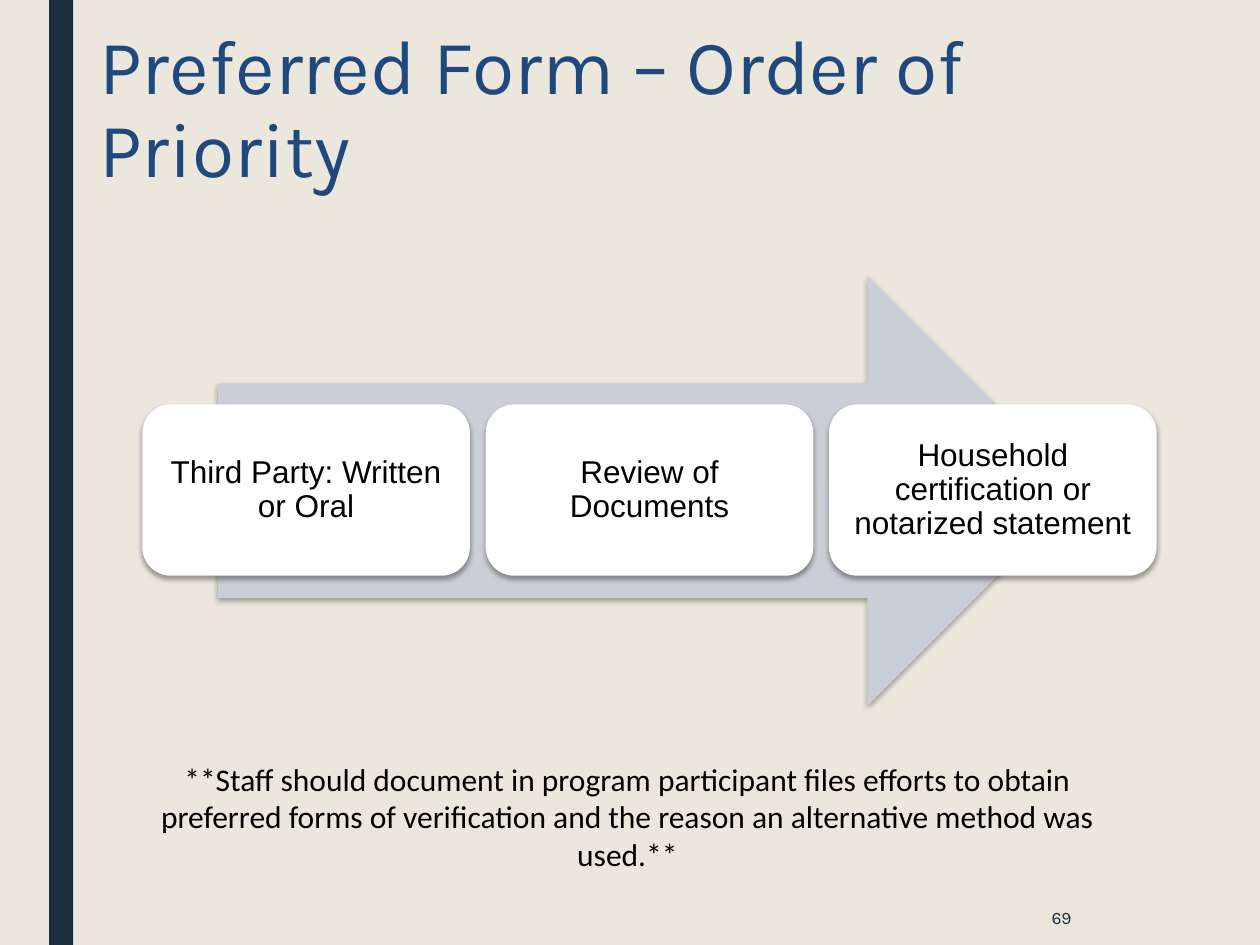
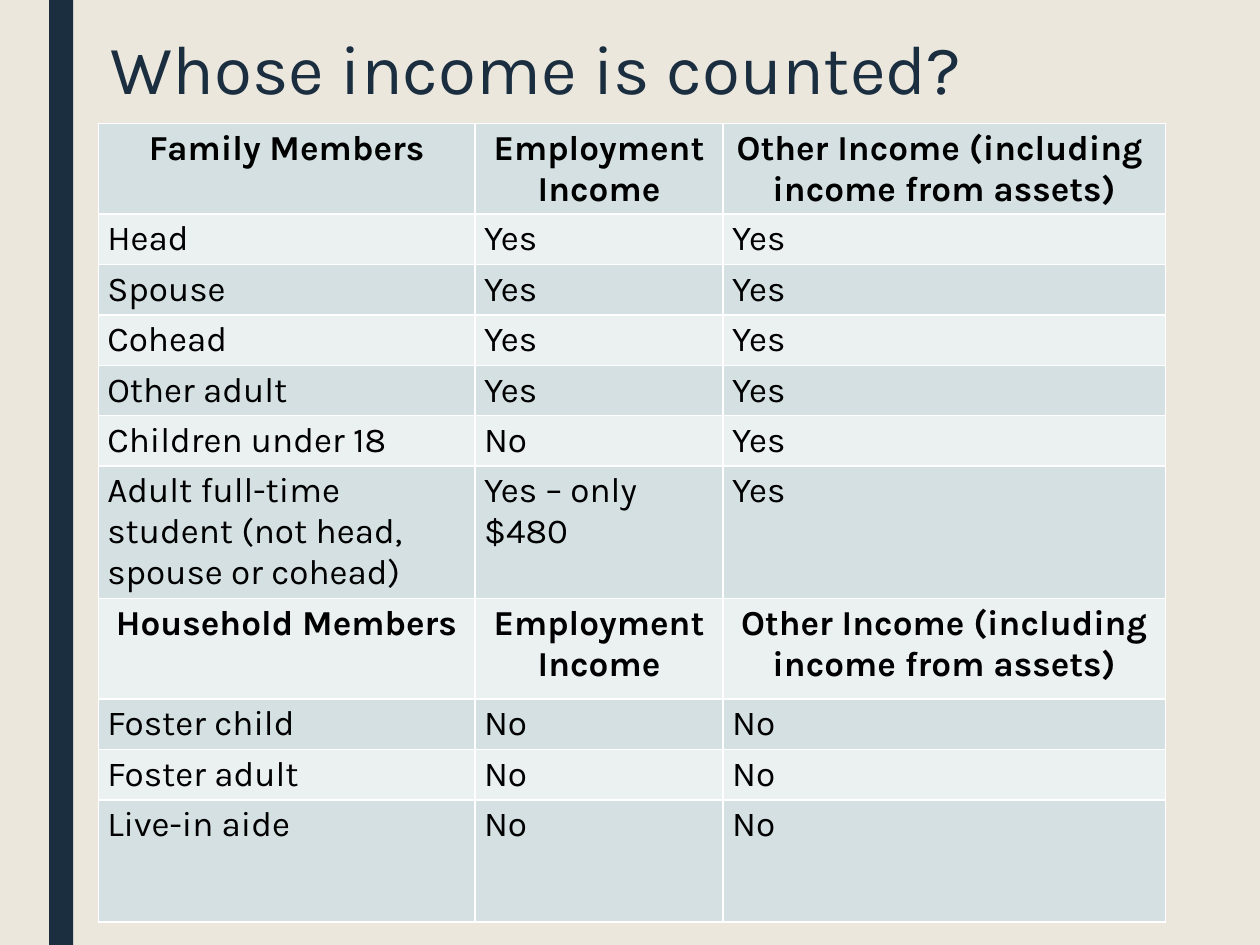
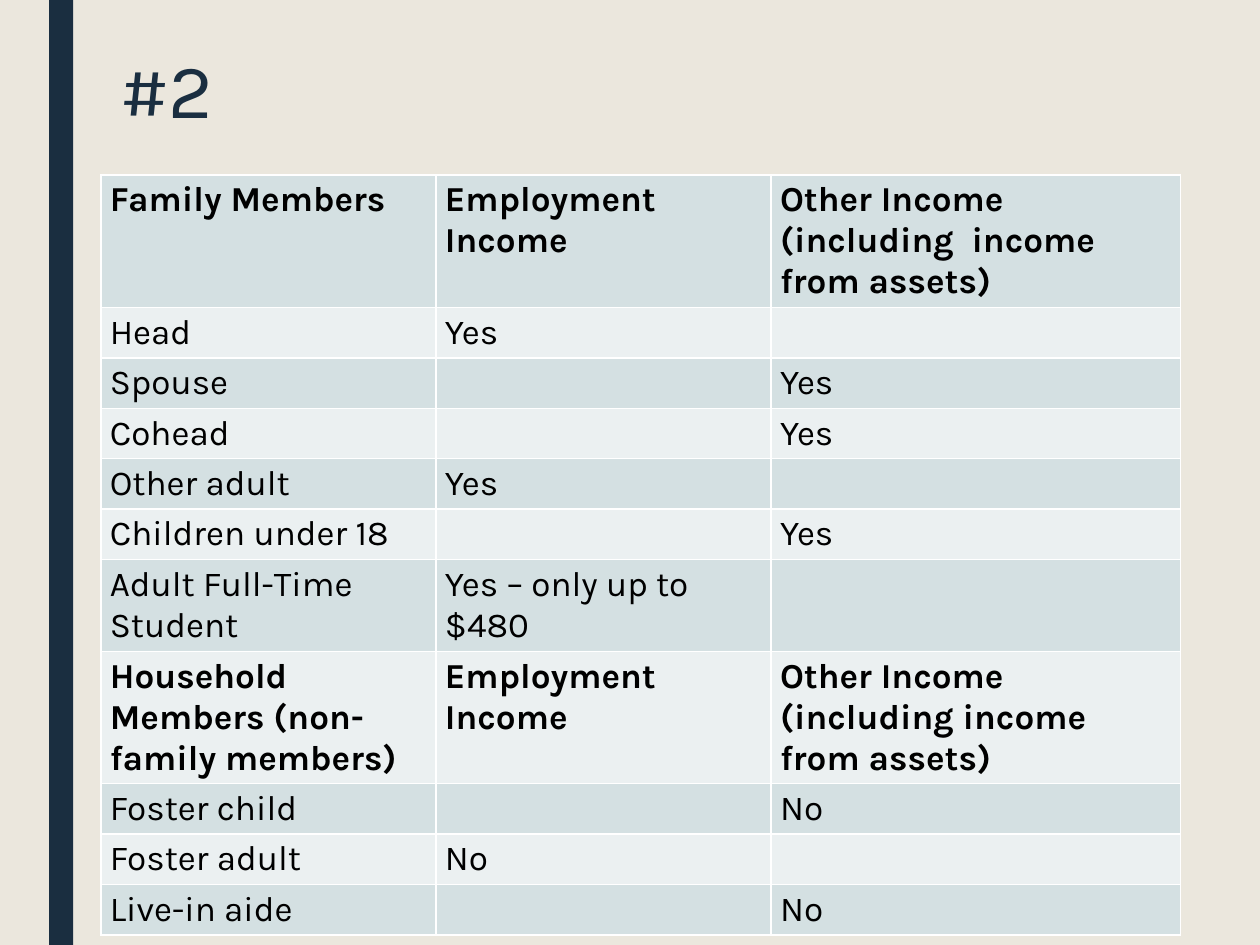
"""Build three slides on income verification: an order of priority and two income tables."""
from typing import NamedTuple

from lxml import etree
from pptx import Presentation
from pptx.dml.color import RGBColor
from pptx.enum.shapes import MSO_SHAPE
from pptx.enum.text import MSO_ANCHOR, PP_ALIGN
from pptx.oxml.ns import qn
from pptx.util import Inches, Pt

RECT = MSO_SHAPE.RECTANGLE
ROUND_RECT = MSO_SHAPE.ROUNDED_RECTANGLE
RIGHT_ARROW = MSO_SHAPE.RIGHT_ARROW
LEFT, CENTER = PP_ALIGN.LEFT, PP_ALIGN.CENTER
TOP, MIDDLE = MSO_ANCHOR.TOP, MSO_ANCHOR.MIDDLE

SAND = RGBColor(0xEB, 0xE7, 0xDD)
NAVY = RGBColor(0x1A, 0x2E, 0x40)
BLUE = RGBColor(0x1F, 0x49, 0x7D)
GREY = RGBColor(0xCB, 0xCE, 0xD6)
WHITE = RGBColor(0xFF, 0xFF, 0xFF)
BLACK = RGBColor(0x00, 0x00, 0x00)
BANDS = (RGBColor(0xD4, 0xE0, 0xE2), RGBColor(0xEB, 0xF0, 0xF1))

SLIDE_W, SLIDE_H = Inches(10), Inches(7.5)
COLS, ROWS = 100, 75
COL, ROW = SLIDE_W / COLS, SLIDE_H / ROWS


class Box(NamedTuple):
    """A place on the slide in grid columns and rows."""
    left: float
    top: float
    width: float
    height: float

    def emu(self) -> tuple[int, int, int, int]:
        """Return the place in EMU."""
        return (round(self.left * COL), round(self.top * ROW),
                round(self.width * COL), round(self.height * ROW))


class Style(NamedTuple):
    """The look of a block of text, with insets in grid units."""
    size: float
    color: RGBColor = BLACK
    font: str = "Karla"
    align: PP_ALIGN = LEFT
    anchor: MSO_ANCHOR = TOP
    spacing: float = 1.0
    inset_x: float = 1
    inset_y: float = 0.5


class IncomeTable(NamedTuple):
    """An income table with its grid and its rows of text."""
    left: float
    top: float
    widths: tuple[float, ...]
    heights: tuple[float, ...]
    header_align: PP_ALIGN
    rows: tuple[tuple[str, str, str], ...]


PRIORITY_TITLE = Style(44, BLUE, anchor=MIDDLE, spacing=0.9, inset_y=1)
COUNTED_TITLE = Style(39.6, NAVY, spacing=0.89)
EXERCISE_TITLE = Style(44, NAVY, spacing=0.89)
PAGE_NUMBER = Style(10, NAVY, align=CENTER, anchor=MIDDLE)
NOTE = Style(18, font="Calibri", align=CENTER)
STEP = Style(18, font="Arial", align=CENTER, anchor=MIDDLE, spacing=0.9,
             inset_x=0.7, inset_y=0.7)
CELL_SIZE, CELL_INSET_X, CELL_INSET_TOP, CELL_INSET_BOTTOM = 20, 0.72, 0.37, 0.12

STEPS = ("Third Party: Written or Oral", "Review of Documents",
         "Household certification or notarized statement")
STEPS_AREA = Box(11.3, 32.1, 80.5, 13.6)
STEP_W = 26

HEADER_ROWS = (0, 7)
EMPLOYMENT = "Employment Income"
OTHER_WIDE = "Other Income (including  income from assets)"
OTHER = "Other Income (including income from assets)"

COUNTED = IncomeTable(
    7.8, 9.8, (29.9, 19.7, 35.1),
    (7.2, 4, 4, 4, 4, 4, 10.4, 8, 4, 4, 9.7), CENTER,
    (("Family Members", EMPLOYMENT, OTHER_WIDE),
     ("Head", "Yes", "Yes"),
     ("Spouse", "Yes", "Yes"),
     ("Cohead", "Yes", "Yes"),
     ("Other adult", "Yes", "Yes"),
     ("Children under 18", "No", "Yes"),
     ("Adult full-time student (not head, spouse or cohead)",
      "Yes – only $480", "Yes"),
     ("Household Members", EMPLOYMENT, OTHER),
     ("Foster child", "No", "No"),
     ("Foster adult", "No", "No"),
     ("Live-in aide", "No", "No")))

EXERCISE = IncomeTable(
    8, 13.9, (26.6, 26.6, 32.5),
    (10.5, 4, 4, 4, 4, 4, 7.3, 10.5, 4, 4, 4), LEFT,
    (("Family Members", EMPLOYMENT, OTHER_WIDE),
     ("Head", "Yes", ""),
     ("Spouse", "", "Yes"),
     ("Cohead", "", "Yes"),
     ("Other adult", "Yes", ""),
     ("Children under 18", "", "Yes"),
     ("Adult Full-Time Student", "Yes – only up to $480", ""),
     ("Household Members (non-family members)", EMPLOYMENT, OTHER),
     ("Foster child", "", "No"),
     ("Foster adult", "No", ""),
     ("Live-in aide", "", "No")))


def write(sp, text: str, style: Style) -> None:
    """Put one styled paragraph into a shape."""
    tf = sp.text_frame
    tf.word_wrap = True
    tf.vertical_anchor = style.anchor
    tf.margin_left = tf.margin_right = round(style.inset_x * COL)
    tf.margin_top = tf.margin_bottom = round(style.inset_y * ROW)
    p = tf.paragraphs[0]
    p.text = text
    p.alignment = style.align
    p.line_spacing = style.spacing
    p.font.name, p.font.size = style.font, Pt(style.size)
    p.font.color.rgb = style.color


def add_text(slide, box: Box, text: str, style: Style) -> None:
    """Add a text box."""
    write(slide.shapes.add_textbox(*box.emu()), text, style)


def add_block(slide, kind: MSO_SHAPE, box: Box, fill: RGBColor):
    """Add a filled shape without an outline or a shadow."""
    sp = slide.shapes.add_shape(kind, *box.emu())
    sp.shadow.inherit = False
    sp.fill.solid()
    sp.fill.fore_color.rgb = fill
    sp.line.fill.background()
    return sp


def add_shadow(sp) -> None:
    """Give a shape a soft shadow that falls downwards."""
    effects = sp.element.spPr.find(qn("a:effectLst"))
    shadow = etree.SubElement(
        effects, qn("a:outerShdw"), blurRad=str(Pt(3.1)), dist=str(Pt(1.8)),
        dir="5400000", algn="ctr", rotWithShape="0")
    color = etree.SubElement(shadow, qn("a:srgbClr"), val=str(BLACK))
    etree.SubElement(color, qn("a:alpha"), val="34000")


def add_borders(cell) -> None:
    """Draw thin white lines on all four sides of a cell."""
    tc_pr = cell._tc.get_or_add_tcPr()
    for i, side in enumerate(("a:lnL", "a:lnR", "a:lnT", "a:lnB")):
        ln = etree.Element(qn(side), w=str(Pt(1)))
        fill = etree.SubElement(ln, qn("a:solidFill"))
        etree.SubElement(fill, qn("a:srgbClr"), val=str(WHITE))
        tc_pr.insert(i, ln)


def fill_cell(cell, text: str, band: RGBColor, bold: bool, align: PP_ALIGN) -> None:
    """Write and colour one table cell."""
    cell.margin_left = cell.margin_right = round(CELL_INSET_X * COL)
    cell.margin_top = round(CELL_INSET_TOP * ROW)
    cell.margin_bottom = round(CELL_INSET_BOTTOM * ROW)
    cell.fill.solid()
    cell.fill.fore_color.rgb = band
    add_borders(cell)
    p = cell.text_frame.paragraphs[0]
    p.text = text
    p.alignment = align
    p.font.name, p.font.size, p.font.bold = "Karla", Pt(CELL_SIZE), bold
    p.font.color.rgb = BLACK


def add_income_table(slide, income: IncomeTable) -> None:
    """Add an income table with two header rows."""
    box = Box(income.left, income.top, sum(income.widths), sum(income.heights))
    table = slide.shapes.add_table(
        len(income.heights), len(income.widths), *box.emu()).table
    table.first_row = table.horz_banding = False
    for column, width in zip(table.columns, income.widths):
        column.width = round(width * COL)
    for i, (row, height, texts) in enumerate(
            zip(table.rows, income.heights, income.rows)):
        row.height = round(height * ROW)
        header = i in HEADER_ROWS
        align = income.header_align if header else LEFT
        for cell, text in zip(row.cells, texts):
            fill_cell(cell, text, BANDS[i % 2], header, align)


def add_slide(prs, title: str, box: Box, style: Style):
    """Add a slide with the side band and a title."""
    slide = prs.slides.add_slide(prs.slide_layouts[6])
    slide.background.fill.solid()
    slide.background.fill.fore_color.rgb = SAND
    add_block(slide, RECT, Box(3.9, 0, 1.9, ROWS), NAVY)
    add_text(slide, box, title, style)
    return slide


def add_priority_steps(slide) -> None:
    """Add the arrow and the evenly spaced steps on it."""
    add_shadow(add_block(slide, RIGHT_ARROW, Box(17.3, 21.9, 68.6, 34.1), GREY))
    pitch = (STEPS_AREA.width - STEP_W) / (len(STEPS) - 1)
    for i, text in enumerate(STEPS):
        box = STEPS_AREA._replace(left=STEPS_AREA.left + i * pitch, width=STEP_W)
        sp = add_block(slide, ROUND_RECT, box, WHITE)
        add_shadow(sp)
        write(sp, text, STEP)


def main() -> None:
    """Build and save the deck."""
    prs = Presentation()
    prs.slide_width, prs.slide_height = SLIDE_W, SLIDE_H

    slide = add_slide(prs, "Preferred Form – Order of Priority",
                      Box(6.9, 2.9, 88.6, 11.8), PRIORITY_TITLE)
    add_text(slide, Box(77.7, 70.6, 13.1, 4.4), "69", PAGE_NUMBER)
    add_priority_steps(slide)
    add_text(slide, Box(9.3, 59.8, 81, 10.1),
             "**Staff should document in program participant files efforts to "
             "obtain preferred forms of verification and the reason an "
             "alternative method was used.**", NOTE)

    slide = add_slide(prs, "Whose income is counted?",
                      Box(7.8, 2.3, 86.4, 6.6), COUNTED_TITLE)
    add_income_table(slide, COUNTED)

    slide = add_slide(prs, "#2", Box(8.6, 3.7, 78.8, 9.2), EXERCISE_TITLE)
    add_income_table(slide, EXERCISE)

    prs.save("out.pptx")


if __name__ == "__main__":
    main()
